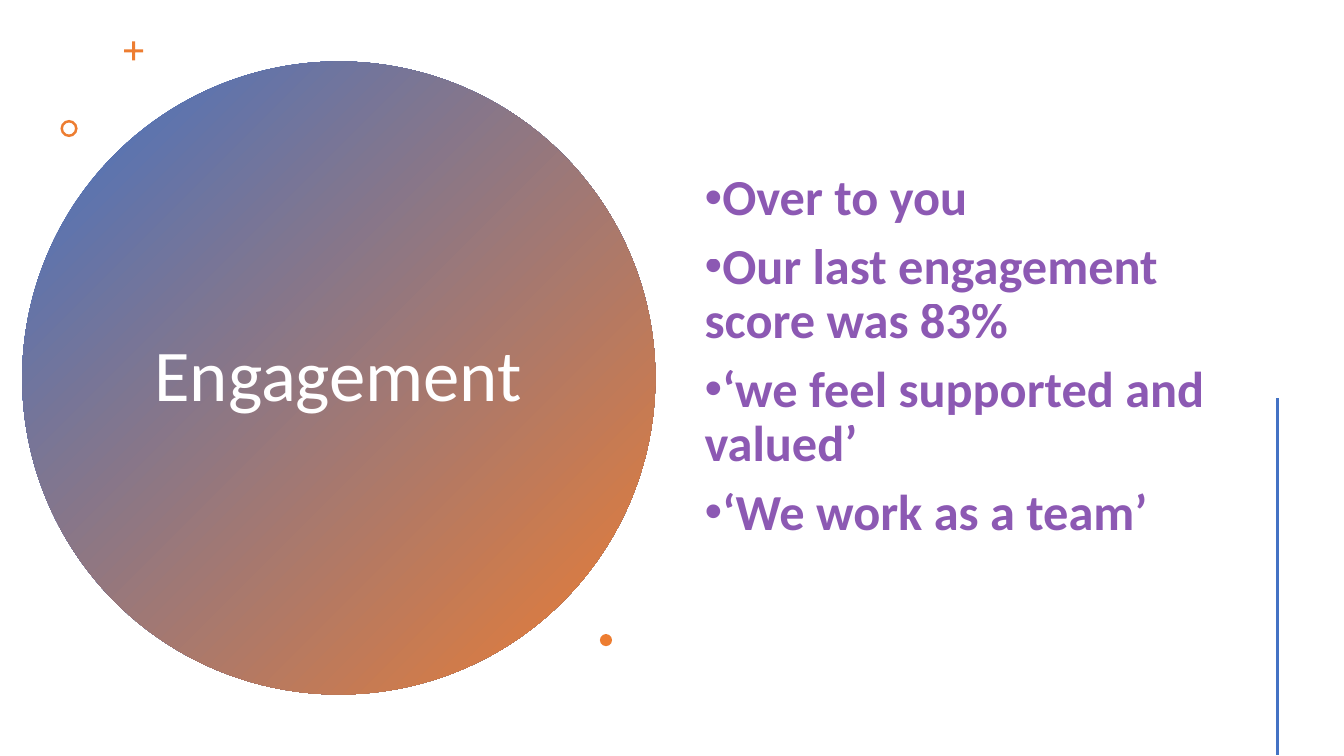
from lxml import etree
from pptx import Presentation
from pptx.dml.color import RGBColor
from pptx.enum.shapes import MSO_CONNECTOR, MSO_SHAPE
from pptx.enum.text import MSO_ANCHOR, MSO_AUTO_SIZE, PP_ALIGN
from pptx.oxml.ns import qn
from pptx.util import Inches, Pt

COLORS = {"blue": "4472C4", "orange": "ED7D31", "purple": "7030A0", "white": "FFFFFF"}
FRAME = {"word_wrap": True, "auto_size": MSO_AUTO_SIZE.NONE, "vertical_anchor": MSO_ANCHOR.MIDDLE}
HEADING_FONT = {"name": "Calibri", "size": Pt(52), "bold": False}
POINT_FONT = {"name": "Calibri", "size": Pt(36), "bold": True}
POINT_SPACING = {"line_spacing": 0.9, "space_before": Pt(10)}
POINTS = [
    "Over to you",
    "Our last engagement score was 83%",
    "‘we feel supported and valued’",
    "‘We work as a team’",
]


def rgb(name):
    return RGBColor.from_string(COLORS[name])


def apply_format(target, values):
    for key, value in values.items():
        setattr(target, key, value)


def add_plain(slide, preset, left, top, size):
    ornament = slide.shapes.add_shape(preset, Inches(left), Inches(top), Inches(size), Inches(size))
    ornament.shadow.inherit = False
    ornament.line.fill.background()
    return ornament


def add_heading_disc(slide, left, top, size):
    disc = add_plain(slide, MSO_SHAPE.OVAL, left, top, size)
    disc.fill.gradient()
    disc.fill.gradient_angle = 315
    for stop, name in zip(disc.fill.gradient_stops, ("blue", "orange")):
        stop.color.rgb = rgb(name)

    heading = slide.shapes.title
    disc._element.addnext(heading._element)
    apply_format(heading, {
        "left": Inches(left + 1.14), "top": Inches(top + 0.8),
        "width": Inches(3.99), "height": Inches(4.67),
    })
    apply_format(heading.text_frame, FRAME)
    heading.text_frame.text = "Engagement"
    line = heading.text_frame.paragraphs[0]
    apply_format(line, {"alignment": PP_ALIGN.CENTER, "line_spacing": 0.9})
    apply_format(line.runs[0].font, HEADING_FONT)
    line.runs[0].font.color.rgb = rgb("white")

    for preset, dx, dy, width, adjustment in (
        (MSO_SHAPE.CROSS, 1.01, -0.2, 0.19, 0.42),
        (MSO_SHAPE.DONUT, 0.38, 0.58, 0.17, 0.15),
        (MSO_SHAPE.OVAL, 5.73, 5.68, 0.12, None),
    ):
        accent = add_plain(slide, preset, left + dx, top + dy, width)
        accent.fill.solid()
        accent.fill.fore_color.rgb = rgb("orange")
        if adjustment:
            accent.adjustments[0] = adjustment


def add_points(slide, left, top, width, height):
    box = slide.shapes.add_textbox(Inches(left), Inches(top), Inches(width), Inches(height))
    frame = box.text_frame
    apply_format(frame, FRAME | {"margin_bottom": Inches(0.49)})
    for index, point in enumerate(POINTS):
        paragraph = frame.add_paragraph() if index else frame.paragraphs[0]
        apply_format(paragraph, POINT_SPACING)
        run = paragraph.add_run()
        run.text = point
        apply_format(run.font, POINT_FONT)
        run.font.color.rgb = rgb("purple")
        color = run._r.rPr.find(".//" + qn("a:srgbClr"))
        etree.SubElement(color, qn("a:alpha")).set("val", "80000")
        properties = paragraph._p.get_or_add_pPr()
        properties.set("marL", "0")
        properties.set("indent", str(-Inches(0.25)))
        etree.SubElement(properties, qn("a:buFont")).set("typeface", "Arial")
        etree.SubElement(properties, qn("a:buChar")).set("char", "•")


def add_side_rule(slide, x, top, bottom):
    rule = slide.shapes.add_connector(
        MSO_CONNECTOR.STRAIGHT, Inches(x), Inches(top), Inches(x), Inches(bottom))
    rule.line.color.rgb = rgb("blue")
    rule.line.width = Pt(2)
    etree.SubElement(rule._element.spPr, qn("a:effectLst"))


def main():
    deck = Presentation()
    deck.slide_width, deck.slide_height = Inches(13.33), Inches(7.5)
    slide = deck.slides.add_slide(deck.slide_layouts[5])
    add_heading_disc(slide, 0.22, 0.61, 6.28)
    add_points(slide, 6.89, 0.57, 5.22, 6.38)
    add_side_rule(slide, 12.67, 3.95, 7.49)
    deck.save("out.pptx")


if __name__ == "__main__":
    main()
